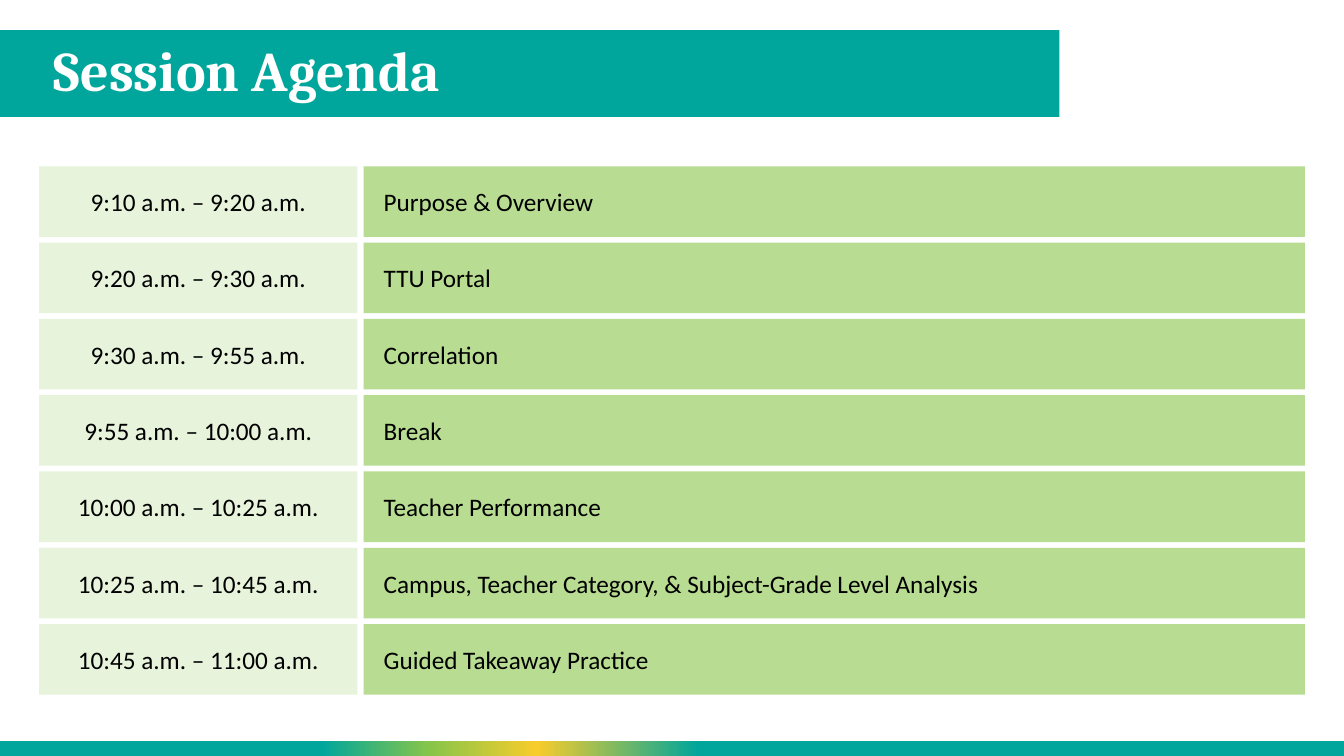
"""Build the session agenda slide with a title band and a timetable."""
import pptx
import pptx.dml.color
import pptx.enum.shapes
import pptx.enum.text
import pptx.oxml
import pptx.oxml.ns
import pptx.util

Pt = pptx.util.Pt
ALIGN = pptx.enum.text.PP_ALIGN
TEAL = "00A69B"


def color(hex_string):
    return pptx.dml.color.RGBColor.from_string(hex_string)


def add_block(left, top, width, height, fill, text="", font="Calibri", size=18,
              text_color="000000", align=ALIGN.LEFT, inset=7.2):
    block = slide.shapes.add_shape(pptx.enum.shapes.MSO_SHAPE.RECTANGLE,
                                   Pt(left), Pt(top), Pt(width), Pt(height))
    block.shadow.inherit = False
    block.line.fill.background()
    block.fill.solid()
    block.fill.fore_color.rgb = color(fill)
    if text:
        frame = block.text_frame
        frame.word_wrap = True
        frame.vertical_anchor = pptx.enum.text.MSO_ANCHOR.MIDDLE
        frame.margin_left = frame.margin_right = Pt(inset)
        paragraph = frame.paragraphs[0]
        paragraph.text = text
        paragraph.alignment = align
        paragraph.font.name = font
        paragraph.font.size = Pt(size)
        paragraph.font.color.rgb = color(text_color)
    return block


presentation = pptx.Presentation()
presentation.slide_width = Pt(960)
presentation.slide_height = Pt(540)
slide = presentation.slides.add_slide(presentation.slide_layouts[6])

title_band = add_block(-0.7, 21.6, 757.5, 61.9, TEAL, "Session Agenda",
                       "Cambria", 40, "FFFFFF", inset=39)
title = title_band.text_frame.paragraphs[0]
title.font.bold = True
title.line_spacing = 0.9

footer = add_block(-0.7, 529.2, 960.7, 10.8, TEAL)
footer.fill.gradient()
footer.fill.gradient_angle = 0
stops = footer.fill._fill._gradFill.find(pptx.oxml.ns.qn("a:gsLst"))
for default_stop in list(stops):
    stops.remove(default_stop)
for percent, stop_color in [(0, TEAL), (24, TEAL), (32, "87C54A"),
                            (40, "F8CC2B"), (52, TEAL), (100, TEAL)]:
    stops.append(pptx.oxml.parse_xml(
        f'<a:gs {pptx.oxml.ns.nsdecls("a")} pos="{percent * 1000}">'
        f'<a:srgbClr val="{stop_color}"/></a:gs>'))

agenda = [
    ("9:10 a.m. – 9:20 a.m.", "Purpose & Overview"),
    ("9:20 a.m. – 9:30 a.m.", "TTU Portal"),
    ("9:30 a.m. – 9:55 a.m.", "Correlation"),
    ("9:55 a.m. – 10:00 a.m.", "Break"),
    ("10:00 a.m. – 10:25 a.m.", "Teacher Performance"),
    ("10:25 a.m. – 10:45 a.m.", "Campus, Teacher Category, & Subject-Grade Level Analysis"),
    ("10:45 a.m. – 11:00 a.m.", "Guided Takeaway Practice"),
]
for row, (time, topic) in enumerate(agenda):
    top = 118.8 + row * 54.5
    add_block(28, top, 227.3, 50.4, "E7F3DB", time, align=ALIGN.CENTER)
    add_block(259.7, top, 672.5, 50.4, "B7DC92", topic, inset=14.4)

presentation.save("out.pptx")
